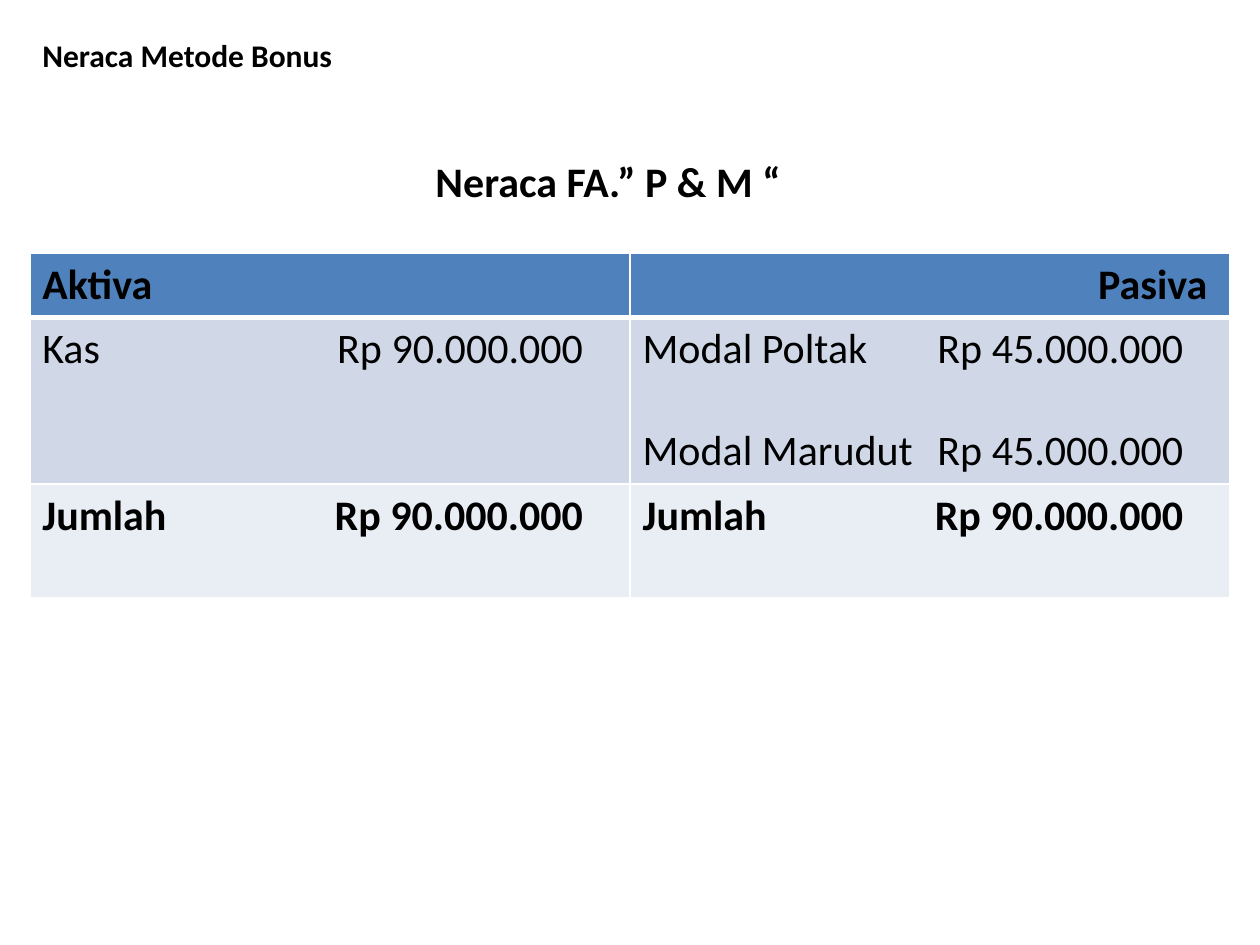
from dataclasses import dataclass
from lxml.etree import SubElement
from pptx import Presentation
from pptx.dml.color import RGBColor
from pptx.enum.text import MSO_ANCHOR, MSO_AUTO_SIZE, PP_ALIGN
from pptx.oxml.ns import qn
from pptx.util import Cm, Pt


@dataclass(frozen=True)
class Theme:
    """Hold the colours, font and type sizes."""
    font: str = "Calibri"
    ink: str = "000000"
    head: str = "4F81BD"
    band: str = "D0D8E8"
    pale: str = "E9EDF4"
    rule: str = "FFFFFF"
    small: int = 18
    large: int = 24
    thin: int = 1
    thick: int = 3


THEME = Theme()


def apply(item, **form):
    """Set each format value on the item."""
    for name, value in form.items():
        setattr(item, name, value)


def write(para, text, size, bold):
    """Write one styled run into a paragraph."""
    run = para.add_run()
    run.text = text
    apply(run.font, name=THEME.font, size=Pt(size), bold=bold)
    run.font.color.rgb = RGBColor.from_string(THEME.ink)


def label(shape, box, text, size):
    """Place a bold line of text in its box."""
    left, top, width, height = box
    apply(shape, left=Cm(left), top=Cm(top), width=Cm(width), height=Cm(height))
    frame = shape.text_frame
    apply(frame, word_wrap=True, auto_size=MSO_AUTO_SIZE.NONE,
          vertical_anchor=MSO_ANCHOR.TOP)
    para = frame.paragraphs[0]
    para.alignment = PP_ALIGN.LEFT
    write(para, text, size, True)


def stop(para, place):
    """Give a paragraph a right tab stop."""
    tabs = SubElement(para._p.get_or_add_pPr(), qn("a:tabLst"))
    SubElement(tabs, qn("a:tab"), pos=str(Cm(place)), algn="r")


def edge(cell, base):
    """Draw the four borders of a cell, then its fill."""
    props = cell._tc.get_or_add_tcPr()
    sides = {"a:lnL": THEME.thin, "a:lnR": THEME.thin,
             "a:lnT": THEME.thin, "a:lnB": base}
    for side, width in sides.items():
        line = SubElement(props, qn(side), w=str(Pt(width)))
        fill = SubElement(line, qn("a:solidFill"))
        SubElement(fill, qn("a:srgbClr"), val=THEME.rule)


def fill_cell(cell, lines, tone, bold, base):
    """Fill one cell with entries and their amounts."""
    edge(cell, base)
    cell.fill.solid()
    cell.fill.fore_color.rgb = RGBColor.from_string(tone)
    frame = cell.text_frame
    for index, text in enumerate(lines):
        para = frame.add_paragraph() if index else frame.paragraphs[0]
        if index:
            para.space_before = Pt(29)
        if "\t" in text:
            stop(para, 10.9)
        write(para, text, THEME.large, bold)


def ledger(slide, box):
    """Build the balance sheet table in its box."""
    rows = [
        (1.3, THEME.head, True, THEME.thick, [["Aktiva"], ["Pasiva"]]),
        (3.36, THEME.band, False, THEME.thin,
         [["Kas\tRp 90.000.000"],
          ["Modal Poltak\tRp 45.000.000", "Modal Marudut\tRp 45.000.000"]]),
        (2.3, THEME.pale, True, THEME.thin, [["Jumlah\tRp 90.000.000"]] * 2),
    ]
    table = slide.shapes.add_table(len(rows), 2, *map(Cm, box)).table
    for r, (height, tone, bold, base, cells) in enumerate(rows):
        table.rows[r].height = Cm(height)
        for c, lines in enumerate(cells):
            fill_cell(table.cell(r, c), lines, tone, bold, base)
    last = table.cell(0, 1)
    last.margin_right = Cm(0.46)
    last.text_frame.paragraphs[0].alignment = PP_ALIGN.RIGHT


def main():
    """Build and save the slide."""
    deck = Presentation()
    apply(deck, slide_width=Cm(25.4), slide_height=Cm(19.05))
    slide = deck.slides.add_slide(deck.slide_layouts[5])
    ledger(slide, (0.6, 5.1, 24.2, 6.96))
    name = slide.shapes.add_textbox(0, 0, 0, 0)
    label(name, (8.53, 3.02, 10.7, 1.28), "Neraca FA.” P & M “", THEME.large)
    label(slide.shapes.title, (0.6, 0.6, 7.95, 1.02),
          "Neraca Metode Bonus", THEME.small)
    deck.save("out.pptx")


if __name__ == "__main__":
    main()
